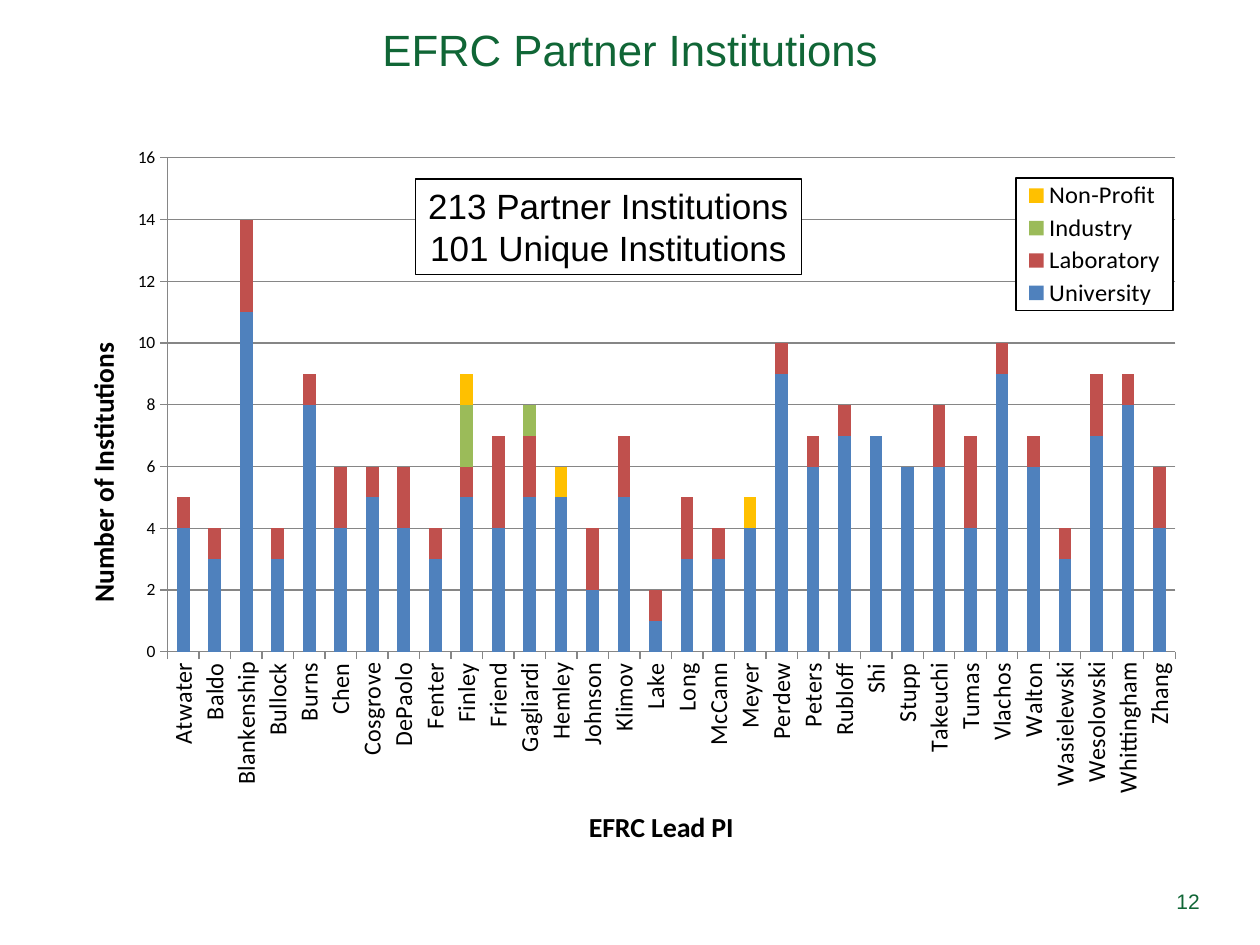
from pptx import Presentation
from pptx.chart.data import CategoryChartData
from pptx.dml.color import RGBColor
from pptx.enum.chart import XL_CHART_TYPE, XL_LEGEND_POSITION, XL_TICK_MARK
from pptx.enum.shapes import MSO_SHAPE
from pptx.enum.text import MSO_ANCHOR, MSO_AUTO_SIZE, PP_ALIGN
from pptx.oxml import parse_xml
from pptx.oxml.ns import nsdecls, qn
from pptx.util import Inches, Pt

STACKED = XL_CHART_TYPE.COLUMN_STACKED
LEGEND_RIGHT = XL_LEGEND_POSITION.RIGHT
TICK_OUTSIDE = XL_TICK_MARK.OUTSIDE
RECTANGLE = MSO_SHAPE.RECTANGLE
MIDDLE = MSO_ANCHOR.MIDDLE
CENTER, RIGHT = PP_ALIGN.CENTER, PP_ALIGN.RIGHT
FIT_SHAPE = MSO_AUTO_SIZE.SHAPE_TO_FIT_TEXT

WIDTH, HEIGHT = 10, 7.5
UPWARD = "-5400000"
COLORS = {
    "green": "106636", "black": "000000", "white": "FFFFFF", "grid": "868686",
    "University": "4F81BD", "Laboratory": "C0504D",
    "Industry": "9BBB59", "Non-Profit": "FFC000",
}
LEADS = (
    "Atwater Baldo Blankenship Bullock Burns Chen Cosgrove DePaolo Fenter Finley "
    "Friend Gagliardi Hemley Johnson Klimov Lake Long McCann Meyer Perdew Peters "
    "Rubloff Shi Stupp Takeuchi Tumas Vlachos Walton Wasielewski Wesolowski "
    "Whittingham Zhang"
).split()
UNIVERSITY = [4, 3, 11, 3, 8, 4, 5, 4, 3, 5, 4, 5, 5, 2, 5, 1,
              3, 3, 4, 9, 6, 7, 7, 6, 6, 4, 9, 6, 3, 7, 8, 4]
LABORATORY = [1, 1, 3, 1, 1, 2, 1, 2, 1, 1, 3, 2, 0, 2, 2, 1,
              2, 1, 0, 1, 1, 1, 0, 0, 2, 3, 1, 1, 1, 2, 1, 2]
INDUSTRY = {"Finley": 2, "Gagliardi": 1}
NON_PROFIT = {"Finley": 1, "Hemley": 1, "Meyer": 1}


def color(name):
    """Return the named colour."""
    return RGBColor.from_string(COLORS[name])


def style_font(font, size, name="Arial", color_name="black", bold=False):
    """Set the typeface, size, colour and weight of a font."""
    font.name, font.size, font.bold = name, Pt(size), bold
    font.color.rgb = color(color_name)


def write_text(shape, text, size, color_name, alignment):
    """Fill a shape with evenly styled paragraphs."""
    shape.text_frame.text = text
    for paragraph in shape.text_frame.paragraphs:
        paragraph.alignment = alignment
        for run in paragraph.runs:
            style_font(run.font, size, color_name=color_name)


def place_part(element, index, shares, inner=False):
    """Place a chart part by shares of the chart's box."""
    for layout in element.findall(qn("c:layout")):
        element.remove(layout)
    target = '<c:layoutTarget val="inner"/>' if inner else ""
    modes = '<c:xMode val="edge"/><c:yMode val="edge"/>'
    values = "".join(f'<c:{key} val="{share}"/>' for key, share in zip("xywh", shares))
    element.insert(index, parse_xml(
        f'<c:layout {nsdecls("c")}><c:manualLayout>{target}{modes}{values}'
        "</c:manualLayout></c:layout>"))


def turn_upward(element):
    """Turn the text of a chart part to read upward."""
    body = next(element.iter(qn("a:bodyPr")))
    body.set("rot", UPWARD)
    body.set("vert", "horz")


def style_axis(axis, title, size, shares):
    """Style an axis with its labels, line and placed title."""
    axis.major_tick_mark = TICK_OUTSIDE
    axis.format.line.color.rgb = color("grid")
    style_font(axis.tick_labels.font, size, "Calibri")
    frame = axis.axis_title.text_frame
    frame.text = title
    style_font(frame.paragraphs[0].runs[0].font, 16, "Calibri", bold=True)
    place_part(axis.axis_title._element, 1, shares)


def add_legend(chart):
    """Add the framed legend over the plot."""
    chart.has_legend = True
    legend = chart.legend
    legend.position = LEGEND_RIGHT
    legend.include_in_layout = True
    style_font(legend.font, 14, "Calibri")
    place_part(legend._element, 1, (0.84, 0.086, 0.137, 0.183))
    legend._element.find(qn("c:overlay")).addnext(parse_xml(
        f'<c:spPr {nsdecls("c", "a")}>'
        f'<a:solidFill><a:srgbClr val="{COLORS["white"]}"/></a:solidFill>'
        f'<a:ln w="9525"><a:solidFill><a:srgbClr val="{COLORS["black"]}"/>'
        "</a:solidFill></a:ln></c:spPr>"))


def add_partner_chart(slide, box):
    """Add the stacked columns of partner institutions per lead."""
    data = CategoryChartData()
    data.categories = LEADS
    data.add_series("University", UNIVERSITY)
    data.add_series("Laboratory", LABORATORY)
    for name, counts in (("Industry", INDUSTRY), ("Non-Profit", NON_PROFIT)):
        data.add_series(name, [counts.get(lead, 0) for lead in LEADS])
    chart = slide.shapes.add_chart(STACKED, *box, data).chart
    chart.has_title = False
    style_font(chart.font, 10, "Calibri")
    plot = chart.plots[0]
    plot.gap_width, plot.overlap, plot.vary_by_categories = 150, 100, False
    for series in plot.series:
        series.format.fill.solid()
        series.format.fill.fore_color.rgb = color(series.name)
    style_axis(chart.category_axis, "EFRC Lead PI", 14, (0.463, 0.95))
    turn_upward(chart.category_axis._element.find(qn("c:txPr")))
    values = chart.value_axis
    style_axis(values, "Number of Institutions", 10, (0.023, 0.313))
    turn_upward(values.axis_title._element)
    values.minimum_scale, values.maximum_scale, values.major_unit = 0, 16, 2
    values.major_gridlines.format.line.color.rgb = color("grid")
    plot_area = next(chart._chartSpace.iter(qn("c:plotArea")))
    place_part(plot_area, 0, (0.1, 0.058, 0.879, 0.683), inner=True)
    add_legend(chart)


def add_label(slide, box, text, size, alignment):
    """Add a green line of text centred vertically in its box."""
    shape = slide.shapes.add_textbox(*box)
    shape.text_frame.word_wrap = True
    shape.text_frame.vertical_anchor = MIDDLE
    write_text(shape, text, size, "green", alignment)


def add_totals(slide, box):
    """Add the framed totals over the chart."""
    shape = slide.shapes.add_shape(RECTANGLE, *box)
    shape.shadow.inherit = False
    shape.fill.solid()
    shape.fill.fore_color.rgb = color("white")
    shape.line.color.rgb = color("black")
    shape.line.width = Pt(0.75)
    frame = shape.text_frame
    frame.word_wrap = False
    frame.auto_size = FIT_SHAPE
    frame.margin_left = frame.margin_right = Inches(0.09)
    frame.margin_top = frame.margin_bottom = Inches(0.04)
    write_text(shape, "213 Partner Institutions\n101 Unique Institutions",
               20, "black", CENTER)


def main():
    """Build and save the slide."""
    presentation = Presentation()
    presentation.slide_width, presentation.slide_height = Inches(WIDTH), Inches(HEIGHT)
    slide = presentation.slides.add_slide(presentation.slide_layouts[6])

    def box(*lengths):
        """Convert a box in inches to slide units."""
        return [Inches(length) for length in lengths]

    add_partner_chart(slide, box(0.42, 0.92, 9.1, 5.85))
    add_label(slide, box(0, -0.24, WIDTH, 1.25), "EFRC Partner Institutions", 25, CENTER)
    add_totals(slide, box(3.3, 1.42, 3.06, 0.76))
    add_label(slide, box(9.1, 6.95, 0.52, 0.4), "12", 12, RIGHT)
    presentation.save("out.pptx")


if __name__ == "__main__":
    main()
